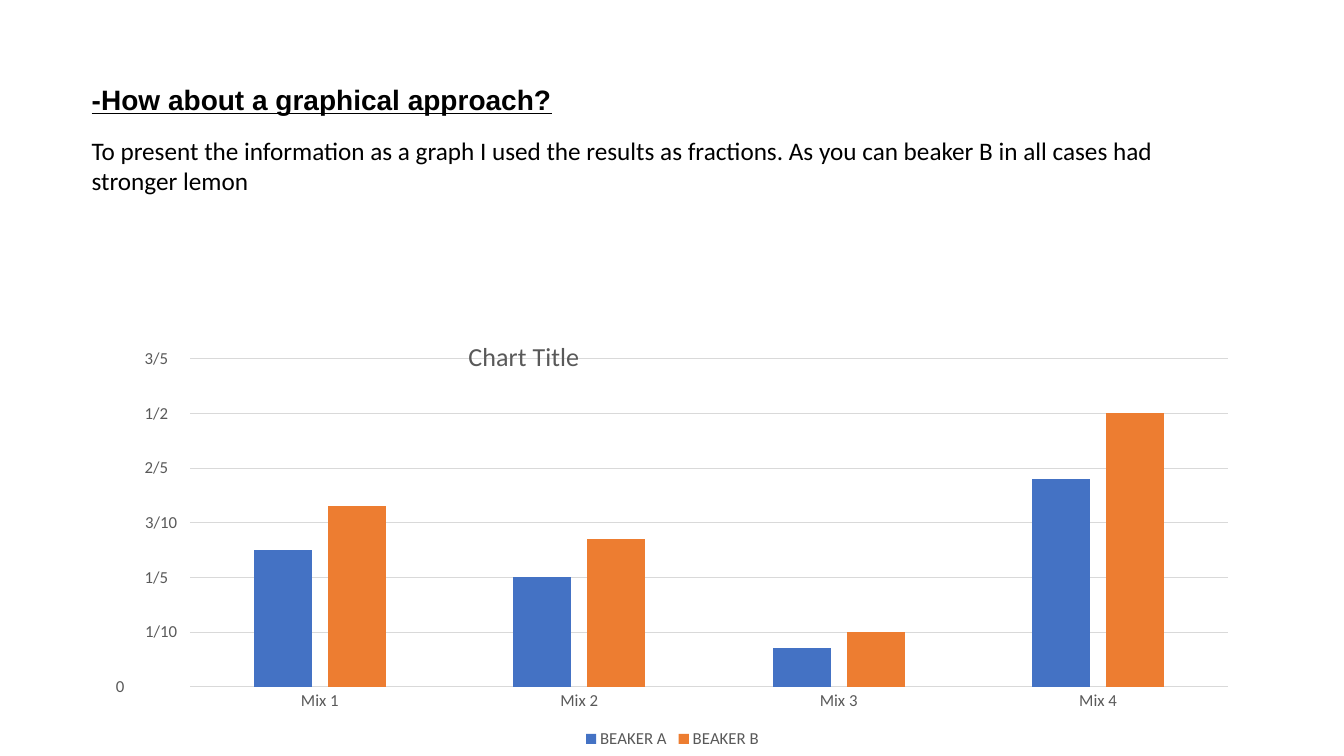
import dataclasses

import pptx
import pptx.chart.data
import pptx.dml.color
import pptx.enum.chart
import pptx.enum.text
import pptx.oxml
import pptx.oxml.ns
import pptx.util

Inches = pptx.util.Inches
Pt = pptx.util.Pt


@dataclasses.dataclass(frozen=True)
class Theme:
    black: str = "000000"
    grey: str = "595959"
    grid: str = "D9D9D9"
    heading_font: str = "Arial"
    body_font: str = "Calibri"
    heading_size: float = 20
    body_size: float = 18
    chart_title_size: float = 18.6
    label_size: float = 12


@dataclasses.dataclass(frozen=True)
class Box:
    left: float
    top: float
    width: float
    height: float


@dataclasses.dataclass(frozen=True)
class Beaker:
    name: str
    fractions: tuple[float, ...]
    color: str


THEME = Theme()
MIXES = ("Mix 1", "Mix 2", "Mix 3", "Mix 4")
BEAKERS = (
    Beaker("BEAKER A", (0.25, 0.2, 0.07, 0.38), "4472C4"),
    Beaker("BEAKER B", (0.33, 0.27, 0.1, 0.5), "ED7D31"),
)
HEADING_BOX = Box(0.81, 0.28, 11.5, 1.45)
BODY_BOX = Box(0.81, 1.29, 11.5, 0.71)
CHART_BOX = Box(0.92, 2.74, 11.5, 4.76)


def rgb(color: str) -> pptx.dml.color.RGBColor:
    return pptx.dml.color.RGBColor.from_string(color)


def style_font(font, name: str, size: float, color: str) -> None:
    font.name = name
    font.size = Pt(size)
    font.color.rgb = rgb(color)


def style_line(line) -> None:
    line.color.rgb = rgb(THEME.grid)
    line.width = Pt(0.75)


def place(shape, box: Box) -> None:
    shape.left, shape.top = Inches(box.left), Inches(box.top)
    shape.width, shape.height = Inches(box.width), Inches(box.height)


def add_layout(element, successors: tuple[str, ...], target: str = "", **fractions: float) -> None:
    """Place a chart part by fractions of the chart's size."""
    for old_layout in element.findall(pptx.oxml.ns.qn("c:layout")):
        element.remove(old_layout)
    target_xml = f'<c:layoutTarget val="{target}"/>' if target else ""
    modes = "".join(f'<c:{axis}Mode val="edge"/>' for axis in "xy")
    values = "".join(f'<c:{key} val="{value}"/>' for key, value in fractions.items())
    layout = pptx.oxml.parse_xml(
        f'<c:layout {pptx.oxml.ns.nsdecls("c")}><c:manualLayout>'
        f"{target_xml}{modes}{values}</c:manualLayout></c:layout>"
    )
    element.insert_element_before(layout, *successors)


def add_heading(slide) -> None:
    title = slide.shapes.title
    place(title, HEADING_BOX)
    title.text_frame.text = "-How about a graphical approach?"
    title.text_frame.vertical_anchor = pptx.enum.text.MSO_ANCHOR.MIDDLE
    paragraph = title.text_frame.paragraphs[0]
    paragraph.alignment = pptx.enum.text.PP_ALIGN.LEFT
    paragraph.line_spacing = 0.9
    font = paragraph.runs[0].font
    style_font(font, THEME.heading_font, THEME.heading_size, THEME.black)
    font.bold = font.underline = True


def add_body(slide) -> None:
    text_box = slide.shapes.add_textbox(0, 0, 0, 0)
    place(text_box, BODY_BOX)
    text_frame = text_box.text_frame
    text_frame.word_wrap = True
    text_frame.auto_size = pptx.enum.text.MSO_AUTO_SIZE.SHAPE_TO_FIT_TEXT
    text_frame.text = (
        "To present the information as a graph I used the results as fractions. "
        "As you can beaker B in all cases had stronger lemon"
    )
    style_font(text_frame.paragraphs[0].runs[0].font,
               THEME.body_font, THEME.body_size, THEME.black)


def add_beaker_chart(slide) -> None:
    data = pptx.chart.data.CategoryChartData()
    data.categories = MIXES
    for beaker in BEAKERS:
        data.add_series(beaker.name, beaker.fractions)
    frame = slide.shapes.add_chart(
        pptx.enum.chart.XL_CHART_TYPE.COLUMN_CLUSTERED,
        Inches(CHART_BOX.left), Inches(CHART_BOX.top),
        Inches(CHART_BOX.width), Inches(CHART_BOX.height), data,
    )
    chart = frame.chart
    style_font(chart.font, THEME.body_font, 10, THEME.black)

    # Columns
    plot = chart.plots[0]
    plot.vary_by_categories = False
    plot.gap_width = 219
    plot.overlap = -27
    for series, beaker in zip(plot.series, BEAKERS):
        series.format.fill.solid()
        series.format.fill.fore_color.rgb = rgb(beaker.color)

    # Axes
    for axis in (chart.category_axis, chart.value_axis):
        axis.major_tick_mark = pptx.enum.chart.XL_TICK_MARK.NONE
        axis.minor_tick_mark = pptx.enum.chart.XL_TICK_MARK.NONE
        style_font(axis.tick_labels.font, THEME.body_font, THEME.label_size, THEME.grey)
    style_line(chart.category_axis.format.line)
    value_axis = chart.value_axis
    value_axis.format.line.fill.background()
    style_line(value_axis.major_gridlines.format.line)
    value_axis.minimum_scale, value_axis.maximum_scale = 0, 0.6
    value_axis.major_unit = 0.1
    value_axis.tick_labels.number_format = r"#\ ???/???"
    value_axis.tick_labels.number_format_is_linked = False

    # Title and legend
    title = chart.chart_title
    title.text_frame.text = "Chart Title"
    title_font = title.text_frame.paragraphs[0].runs[0].font
    style_font(title_font, THEME.body_font, THEME.chart_title_size, THEME.grey)
    title_font.bold = False
    title.include_in_layout = False
    chart.has_legend = True
    legend = chart.legend
    legend.position = pptx.enum.chart.XL_LEGEND_POSITION.BOTTOM
    legend.include_in_layout = False
    style_font(legend.font, THEME.body_font, THEME.label_size, THEME.grey)

    # Positions inside the chart
    add_layout(title._element, ("c:overlay", "c:spPr", "c:txPr"), x=0.32, y=0.12)
    plot_area = chart._chartSpace.chart.plotArea
    add_layout(plot_area, ("c:barChart",), "inner", x=0.084, y=0.172, w=0.895, h=0.684)
    add_layout(legend._element, ("c:overlay", "c:spPr", "c:txPr"),
               x=0.42, y=0.95, w=0.16, h=0.06)


def main() -> None:
    presentation = pptx.Presentation()
    presentation.slide_width = Inches(13.33)
    presentation.slide_height = Inches(7.5)
    slide = presentation.slides.add_slide(presentation.slide_layouts.get_by_name("Title Only"))
    add_heading(slide)
    add_beaker_chart(slide)
    add_body(slide)
    presentation.save("out.pptx")


if __name__ == "__main__":
    main()
